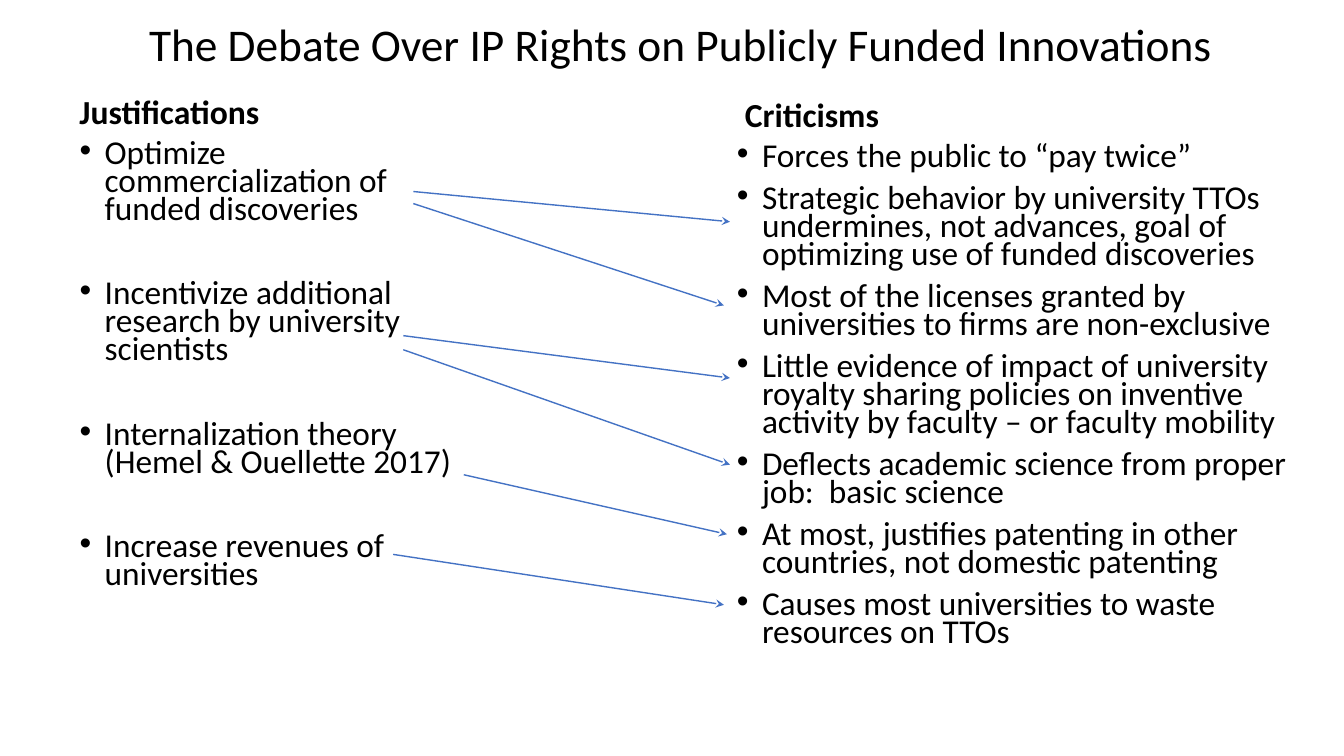
from lxml import etree
from pptx import Presentation
from pptx.dml.color import RGBColor
from pptx.enum.shapes import MSO_CONNECTOR
from pptx.enum.text import MSO_ANCHOR as Anchor, PP_ALIGN as Align
from pptx.oxml.ns import qn
from pptx.util import Inches, Pt

BLACK = RGBColor(0x00, 0x00, 0x00)
BLUE = RGBColor(0x44, 0x72, 0xC4)
FONT = "Calibri"

TITLE = "The Debate Over IP Rights on Publicly Funded Innovations"
JUSTIFICATIONS = [
    "Optimize commercialization of funded discoveries",
    "Incentivize additional research by university scientists",
    "Internalization theory (Hemel & Ouellette 2017)",
    "Increase revenues of universities",
]
CRITICISMS = [
    "Forces the public to “pay twice”",
    "Strategic behavior by university TTOs undermines, not advances, "
    "goal of optimizing use of funded discoveries",
    "Most of the licenses granted by universities to firms are non-exclusive",
    "Little evidence of impact of university royalty sharing policies on "
    "inventive activity by faculty – or faculty mobility",
    "Deflects academic science from proper job:  basic science",
    "At most, justifies patenting in other countries, not domestic patenting",
    "Causes most universities to waste resources on TTOs",
]
# heading, heading box, points, points box, gap between points in points
COLUMNS = [
    ("Justifications", (0.69, 0.46, 5.64, 0.9),
     JUSTIFICATIONS, (0.69, 1.36, 4.01, 5.38), 40.3),
    ("Criticisms", (7.29, 0.49, 5.67, 0.9),
     CRITICISMS, (7.21, 1.39, 5.67, 5.59), 10),
]
# from a justification to the criticism that answers it
REBUTTALS = [
    ((4.1, 1.9), (7.24, 2.2)),
    ((4.1, 2.02), (7.18, 3.03)),
    ((4, 3.33), (7.24, 3.75)),
    ((4, 3.47), (7.24, 4.61)),
    ((4.6, 4.71), (7.21, 5.3)),
    ((3.9, 5.5), (7.18, 6)),
]


def add_text(slide, box, lines, size, bold=False, align=Align.LEFT,
             anchor=Anchor.TOP, spacing=0.9, gap=0, bullet=False):
    frame = slide.shapes.add_textbox(*map(Inches, box)).text_frame
    frame.word_wrap = True
    frame.vertical_anchor = anchor
    for index, line in enumerate(lines):
        paragraph = frame.paragraphs[0] if index == 0 else frame.add_paragraph()
        if bullet:
            props = paragraph._p.get_or_add_pPr()
            props.set("marL", str(Inches(0.25)))
            props.set("indent", str(Inches(-0.25)))
            etree.SubElement(props, qn("a:buFont")).set("typeface", "Arial")
            etree.SubElement(props, qn("a:buChar")).set("char", "•")
        paragraph.alignment = align
        paragraph.line_spacing = spacing
        if index:
            paragraph.space_before = Pt(gap)
        run = paragraph.add_run()
        run.text = line
        run.font.name = FONT
        run.font.size = Pt(size)
        run.font.bold = bold
        run.font.color.rgb = BLACK


def add_arrow(slide, start, end):
    arrow = slide.shapes.add_connector(
        MSO_CONNECTOR.STRAIGHT, *map(Inches, start + end))
    arrow.line.color.rgb = BLUE
    arrow.line.width = Pt(1)
    props = arrow._element.spPr
    etree.SubElement(props.find(qn("a:ln")), qn("a:tailEnd")).set("type", "stealth")
    etree.SubElement(props, qn("a:effectLst"))


def main():
    deck = Presentation()
    deck.slide_width, deck.slide_height = Inches(13.33), Inches(7.5)
    slide = deck.slides.add_slide(deck.slide_layouts[6])
    add_text(slide, (1, 0.01, 11.5, 0.9), [TITLE], 32.4,
             align=Align.CENTER, anchor=Anchor.MIDDLE)
    for heading, heading_box, points, points_box, gap in COLUMNS:
        add_text(slide, heading_box, [heading], 24, bold=True, anchor=Anchor.BOTTOM)
        add_text(slide, points_box, points, 23.8, spacing=0.7, gap=gap, bullet=True)
    for start, end in REBUTTALS:
        add_arrow(slide, start, end)
    deck.save("out.pptx")


if __name__ == "__main__":
    main()
